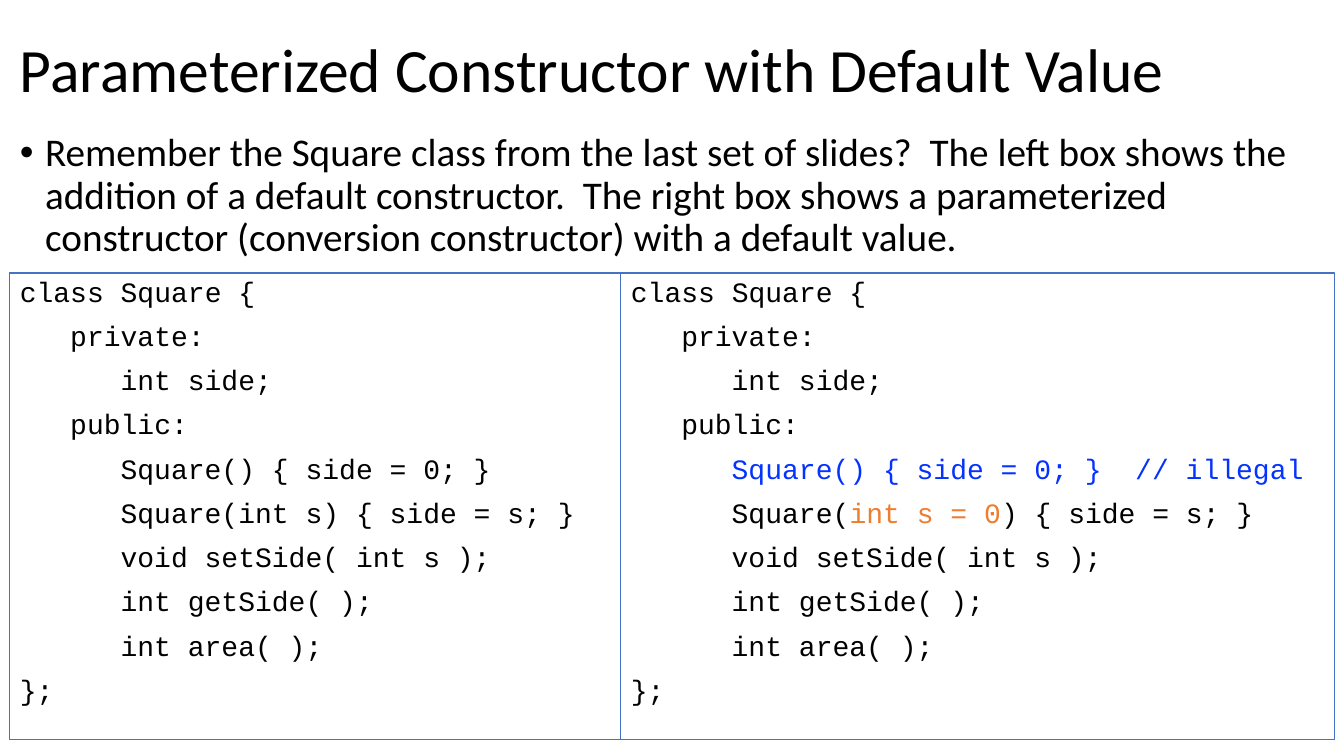
from dataclasses import dataclass

from lxml import etree
from pptx import Presentation
from pptx.dml.color import RGBColor
from pptx.enum.shapes import MSO_SHAPE
from pptx.enum.text import MSO_ANCHOR, MSO_AUTO_SIZE, PP_ALIGN
from pptx.oxml.ns import qn
from pptx.util import Cm, Pt

RECTANGLE = MSO_SHAPE.RECTANGLE
TOP, MIDDLE = MSO_ANCHOR.TOP, MSO_ANCHOR.MIDDLE
NO_AUTOFIT = MSO_AUTO_SIZE.NONE
LEFT = PP_ALIGN.LEFT

BLACK, BORDER, BLUE, ORANGE = "000000", "4472C4", "0432FF", "ED7D31"
PROSE_FONT, CODE_FONT = "Calibri", "Courier New"
MARGIN = 0.25
CODE_TOP, CODE_HEIGHT = 6.88, 11.76
CODE_INDENT = 1.27  # three characters of 20 pt code
BULLET_INDENT = 0.64


@dataclass(frozen=True)
class Piece:
    text: str
    color: str = BLACK


@dataclass(frozen=True)
class CodeLine:
    level: int
    pieces: tuple[Piece, ...]


@dataclass(frozen=True)
class CodeBox:
    left: float
    width: float
    constructors: tuple[CodeLine, ...]


def code(level: int, text: str, color: str = BLACK) -> CodeLine:
    return CodeLine(level, (Piece(text, color),))


CLASS_START = (
    code(0, "class Square {"),
    code(1, "private:"),
    code(2, "int side;"),
    code(1, "public:"),
)
CLASS_END = (
    code(2, "void setSide( int s );"),
    code(2, "int getSide( );"),
    code(2, "int area( );"),
    code(0, "};"),
)
LEFT_WIDTH = 15.4
CODE_BOXES = (
    CodeBox(MARGIN, LEFT_WIDTH, (
        code(2, "Square() { side = 0; }"),
        code(2, "Square(int s) { side = s; }"),
    )),
    CodeBox(MARGIN + LEFT_WIDTH, 17.98, (
        code(2, "Square() { side = 0; }  // illegal", BLUE),
        CodeLine(2, (Piece("Square("), Piece("int s = 0", ORANGE), Piece(") { side = s; }"))),
    )),
)


def rgb(color: str) -> RGBColor:
    return RGBColor.from_string(color)


def add_run(paragraph, piece: Piece, font: str, size: float) -> None:
    run = paragraph.add_run()
    run.text = piece.text
    run.font.name = font
    run.font.size = Pt(size)
    run.font.color.rgb = rgb(piece.color)


def prepare_frame(frame, anchor) -> None:
    frame.word_wrap = True
    frame.auto_size = NO_AUTOFIT
    frame.vertical_anchor = anchor


def format_paragraph(paragraph, space_before: float = 10) -> None:
    paragraph.alignment = LEFT
    paragraph.line_spacing = 0.9
    paragraph.space_before = Pt(space_before)


def set_indent(paragraph, margin: float, first_line: float = 0) -> None:
    properties = paragraph._p.get_or_add_pPr()
    properties.set("marL", str(Cm(margin)))
    properties.set("indent", str(Cm(first_line)))


def add_title(slide, text: str) -> None:
    title = slide.shapes.title
    title.left, title.top = Cm(MARGIN), Cm(0.41)
    title.width, title.height = Cm(30.89), Cm(2.82)
    prepare_frame(title.text_frame, MIDDLE)
    heading = title.text_frame.paragraphs[0]
    format_paragraph(heading, space_before=0)
    add_run(heading, Piece(text), PROSE_FONT, 44)


def add_explanation(slide, text: str) -> None:
    explanation = slide.shapes.add_textbox(Cm(MARGIN), Cm(3.23), Cm(33.38), Cm(14.55))
    prepare_frame(explanation.text_frame, TOP)
    bullet = explanation.text_frame.paragraphs[0]
    format_paragraph(bullet)
    set_indent(bullet, BULLET_INDENT, -BULLET_INDENT)
    properties = bullet._p.get_or_add_pPr()
    etree.SubElement(properties, qn("a:buFont")).set("typeface", "Arial")
    etree.SubElement(properties, qn("a:buChar")).set("char", "•")
    add_run(bullet, Piece(text), PROSE_FONT, 28)


def add_code_box(slide, box: CodeBox) -> None:
    panel = slide.shapes.add_shape(
        RECTANGLE, Cm(box.left), Cm(CODE_TOP), Cm(box.width), Cm(CODE_HEIGHT))
    panel.shadow.inherit = False
    panel.fill.background()
    panel.line.color.rgb = rgb(BORDER)
    panel.line.width = Pt(0.75)
    frame = panel.text_frame
    prepare_frame(frame, TOP)
    for index, line in enumerate(CLASS_START + box.constructors + CLASS_END):
        paragraph = frame.add_paragraph() if index else frame.paragraphs[0]
        format_paragraph(paragraph)
        set_indent(paragraph, line.level * CODE_INDENT)
        for piece in line.pieces:
            add_run(paragraph, piece, CODE_FONT, 20)


def main() -> None:
    deck = Presentation()
    deck.slide_width, deck.slide_height = Cm(33.87), Cm(19.05)
    slide = deck.slides.add_slide(deck.slide_layouts.get_by_name("Title Only"))
    add_title(slide, "Parameterized Constructor with Default Value")
    add_explanation(
        slide,
        "Remember the Square class from the last set of slides?  The left box shows "
        "the addition of a default constructor.  The right box shows a parameterized "
        "constructor (conversion constructor) with a default value.")
    for box in CODE_BOXES:
        add_code_box(slide, box)
    deck.save("out.pptx")


if __name__ == "__main__":
    main()
